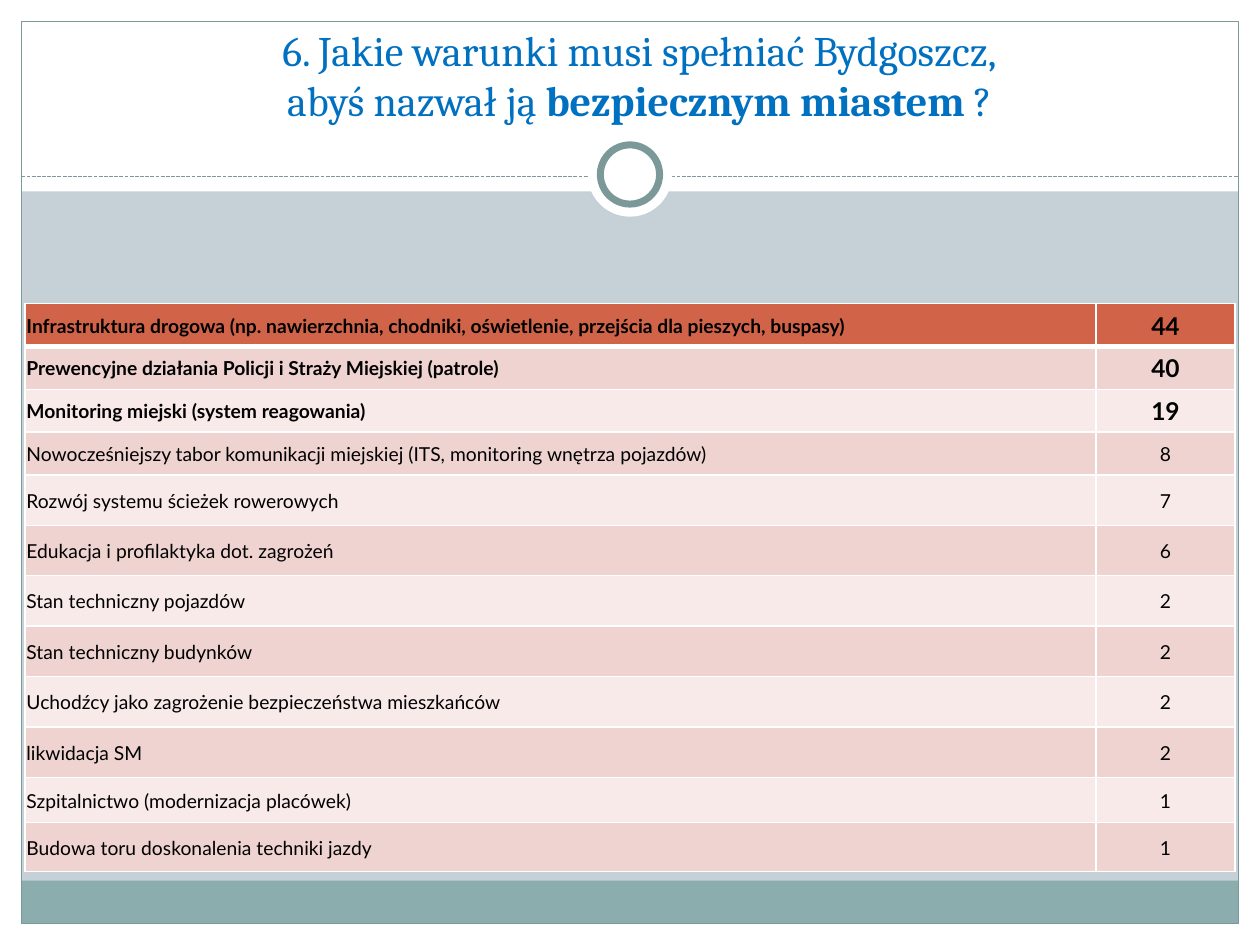
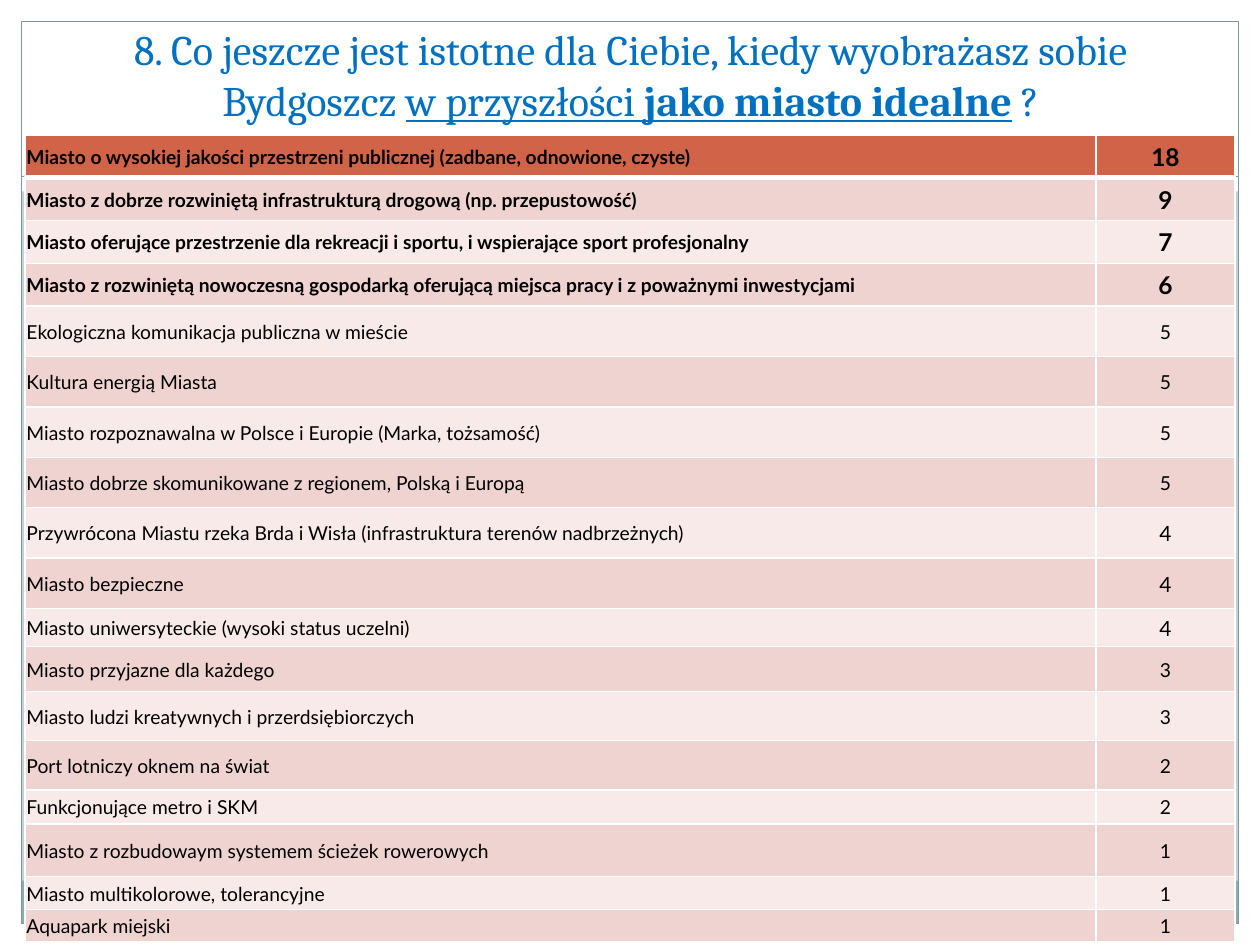
from lxml.etree import SubElement
from pptx import Presentation
from pptx.dml.color import RGBColor
from pptx.enum.dml import MSO_LINE
from pptx.enum.shapes import MSO_CONNECTOR, MSO_SHAPE
from pptx.enum.text import MSO_ANCHOR, PP_ALIGN
from pptx.oxml.ns import qn
from pptx.util import Inches, Pt

COLORS = {
    "back": "C5D1D7", "white": "FFFFFF", "band": "8CADAE", "edge": "7C999A",
    "title": "0070C0", "text": "000000",
    "head": "D16349", "odd": "EED3D0", "even": "F7EAE9",
}
WIDE, HIGH, RIM = 10, 7.5, 0.17
COLS = (8.5, 1.1)
BIG = 14  # size of the leading values, whose rows are bold

# Rows: label, value, row height, value size
SAFE = [
    ("Infrastruktura drogowa (np. nawierzchnia, chodniki, oświetlenie, "
     "przejścia dla pieszych, buspasy)", 44, 0.34, BIG),
    ("Prewencyjne działania Policji i Straży Miejskiej (patrole)", 40, 0.34, BIG),
    ("Monitoring miejski (system reagowania)", 19, 0.34, BIG),
    ("Nowocześniejszy tabor komunikacji miejskiej (ITS, monitoring wnętrza pojazdów)",
     8, 0.34, 11),
    ("Rozwój systemu ścieżek rowerowych", 7, 0.4, 11),
    ("Edukacja i profilaktyka dot. zagrożeń", 6, 0.4, 11),
    ("Stan techniczny pojazdów", 2, 0.4, 11),
    ("Stan techniczny budynków", 2, 0.4, 11),
    ("Uchodźcy jako zagrożenie bezpieczeństwa mieszkańców", 2, 0.4, 11),
    ("likwidacja SM", 2, 0.4, 11),
    ("Szpitalnictwo (modernizacja placówek)", 1, 0.36, 11),
    ("Budowa toru doskonalenia techniki jazdy", 1, 0.39, 11),
]
IDEAL = [
    ("Miasto o wysokiej jakości przestrzeni publicznej (zadbane, odnowione, czyste)",
     18, 0.34, BIG),
    ("Miasto z dobrze rozwiniętą infrastrukturą drogową (np. przepustowość)",
     9, 0.34, BIG),
    ("Miasto oferujące przestrzenie dla rekreacji i sportu, i wspierające "
     "sport profesjonalny", 7, 0.34, BIG),
    ("Miasto z rozwiniętą nowoczesną gospodarką oferującą miejsca pracy "
     "i z poważnymi inwestycjami", 6, 0.34, BIG),
    ("Ekologiczna komunikacja publiczna w mieście", 5, 0.4, 11),
    ("Kultura energią Miasta", 5, 0.4, 11),
    ("Miasto rozpoznawalna w Polsce i Europie (Marka, tożsamość)", 5, 0.4, 11),
    ("Miasto dobrze skomunikowane z regionem, Polską i Europą", 5, 0.4, 11),
    ("Przywrócona Miastu rzeka Brda i Wisła (infrastruktura terenów nadbrzeżnych)",
     4, 0.4, 12),
    ("Miasto bezpieczne", 4, 0.4, 12),
    ("Miasto uniwersyteckie (wysoki status uczelni)", 4, 0.3, 12),
    ("Miasto przyjazne dla każdego", 3, 0.36, 11),
    ("Miasto ludzi kreatywnych i przerdsiębiorczych", 3, 0.39, 11),
    ("Port lotniczy oknem na świat", 2, 0.39, 11),
    ("Funkcjonujące metro i SKM", 2, 0.27, 11),
    ("Miasto z rozbudowaym systemem ścieżek rowerowych", 1, 0.42, 11),
    ("Miasto multikolorowe, tolerancyjne", 1, 0.26, 11),
    ("Aquapark miejski", 1, 0.26, 11),
]


def color(name):
    return RGBColor.from_string(COLORS[name])


def add_part(slide, kind, box, fill=None, line=None, width=0.75):
    part = slide.shapes.add_shape(kind, *map(Inches, box))
    part.shadow.inherit = False
    if fill:
        part.fill.solid()
        part.fill.fore_color.rgb = color(fill)
    else:
        part.fill.background()
    if line:
        part.line.color.rgb = color(line)
        part.line.width = Pt(width)
    else:
        part.line.fill.background()


def add_ring(slide, mid, top, size):
    # White disc with a smaller ring inside it
    gap = 0.1
    add_part(slide, MSO_SHAPE.OVAL, (mid - size / 2, top, size, size), "white")
    inner = size - 2 * gap
    add_part(slide, MSO_SHAPE.OVAL, (mid - inner / 2, top + gap, inner, inner),
             "white", "edge", 4)


def add_frame(slide, wide, high):
    slide.background.fill.solid()
    slide.background.fill.fore_color.rgb = color("back")
    # White margins and title band
    for box in ((0, high - RIM, wide, RIM), (0, 0, wide, 1.52),
                (0, 0, RIM, high), (wide - RIM, 0, RIM, high)):
        add_part(slide, MSO_SHAPE.RECTANGLE, box, "white")
    # Footer band and outline
    inner = wide - 2 * RIM
    add_part(slide, MSO_SHAPE.RECTANGLE, (RIM, high - 0.51, inner, 0.34), "band")
    add_part(slide, MSO_SHAPE.RECTANGLE, (RIM, RIM, inner, high - 2 * RIM), line="edge")
    # Dashed divider
    rule = slide.shapes.add_connector(
        MSO_CONNECTOR.STRAIGHT, *map(Inches, (RIM, 1.4, wide - RIM, 1.4)))
    rule.line.color.rgb = color("edge")
    rule.line.width = Pt(0.75)
    rule.line.dash_style = MSO_LINE.SQUARE_DOT
    SubElement(rule._element.spPr, qn("a:effectLst"))
    add_ring(slide, wide / 2, 1.05, 0.67)


def add_title(slide, box, lines):
    # Each line is a list of (text, bold, underline)
    frame = slide.shapes.add_textbox(*map(Inches, box)).text_frame
    frame.word_wrap = True
    frame.vertical_anchor = MSO_ANCHOR.BOTTOM
    para = frame.paragraphs[0]
    para.alignment = PP_ALIGN.CENTER
    for num, line in enumerate(lines):
        if num:
            para.add_line_break()
        for text, bold, under in line:
            run = para.add_run()
            run.text = text
            font = run.font
            font.name, font.size = "Cambria", Pt(24)
            font.bold, font.underline = bold, under
            font.color.rgb = color("title")


def set_edges(cell, row):
    props = cell._tc.get_or_add_tcPr()
    widths = {"L": 1, "R": 1, "T": 3 if row == 1 else 1, "B": 3 if row == 0 else 1}
    for side, width in widths.items():
        edge = SubElement(props, qn("a:ln" + side), w=str(Pt(width)))
        fill = SubElement(edge, qn("a:solidFill"))
        SubElement(fill, qn("a:srgbClr"), val=COLORS["white"])


def set_cell(cell, text, size, bold, fill):
    cell.fill.solid()
    cell.fill.fore_color.rgb = color(fill)
    cell.vertical_anchor = MSO_ANCHOR.MIDDLE
    cell.margin_left = cell.margin_top = cell.margin_right = Inches(0.01)
    cell.margin_bottom = 0
    para = cell.text_frame.paragraphs[0]
    para.text = text
    font = para.runs[0].font
    font.name, font.size, font.bold = "Lato", Pt(size), bold
    font.color.rgb = color("text")
    return para


def add_votes(slide, left, top, rows):
    high = sum(row[2] for row in rows)
    box = map(Inches, (left, top, sum(COLS), high))
    table = slide.shapes.add_table(len(rows), len(COLS), *box).table
    for col, width in zip(table.columns, COLS):
        col.width = Inches(width)
    for num, (label, value, tall, size) in enumerate(rows):
        table.rows[num].height = Inches(tall)
        fill = "head" if num == 0 else "odd" if num % 2 else "even"
        name, count = table.cell(num, 0), table.cell(num, 1)
        for cell in (name, count):
            set_edges(cell, num)
        bold = size == BIG
        set_cell(name, label, 11, bold, fill)
        set_cell(count, str(value), size, bold, fill).alignment = PP_ALIGN.CENTER


def add_page(deck, box, lines, top, rows):
    slide = deck.slides.add_slide(deck.slide_layouts[6])
    add_frame(slide, WIDE, HIGH)
    add_title(slide, box, lines)
    add_votes(slide, 0.2, top, rows)


def main():
    deck = Presentation()
    deck.slide_width, deck.slide_height = Inches(WIDE), Inches(HIGH)
    add_page(deck, (0.35, 0.29, 9.45, 0.75), [
        [("6. Jakie warunki musi spełniać Bydgoszcz,", False, False)],
        [("abyś nazwał ją ", False, False), ("bezpiecznym miastem ", True, False),
         ("?", False, False)],
    ], 2.41, SAFE)
    add_page(deck, (0.28, 0.21, 9.45, 0.83), [
        [("8. Co jeszcze jest istotne dla Ciebie, kiedy wyobrażasz sobie Bydgoszcz ",
          False, False),
         ("w przyszłości ", False, True), ("jako miasto idealne", True, True),
         (" ", True, False), ("?", False, False)],
    ], 1.07, IDEAL)
    deck.save("out.pptx")


if __name__ == "__main__":
    main()
